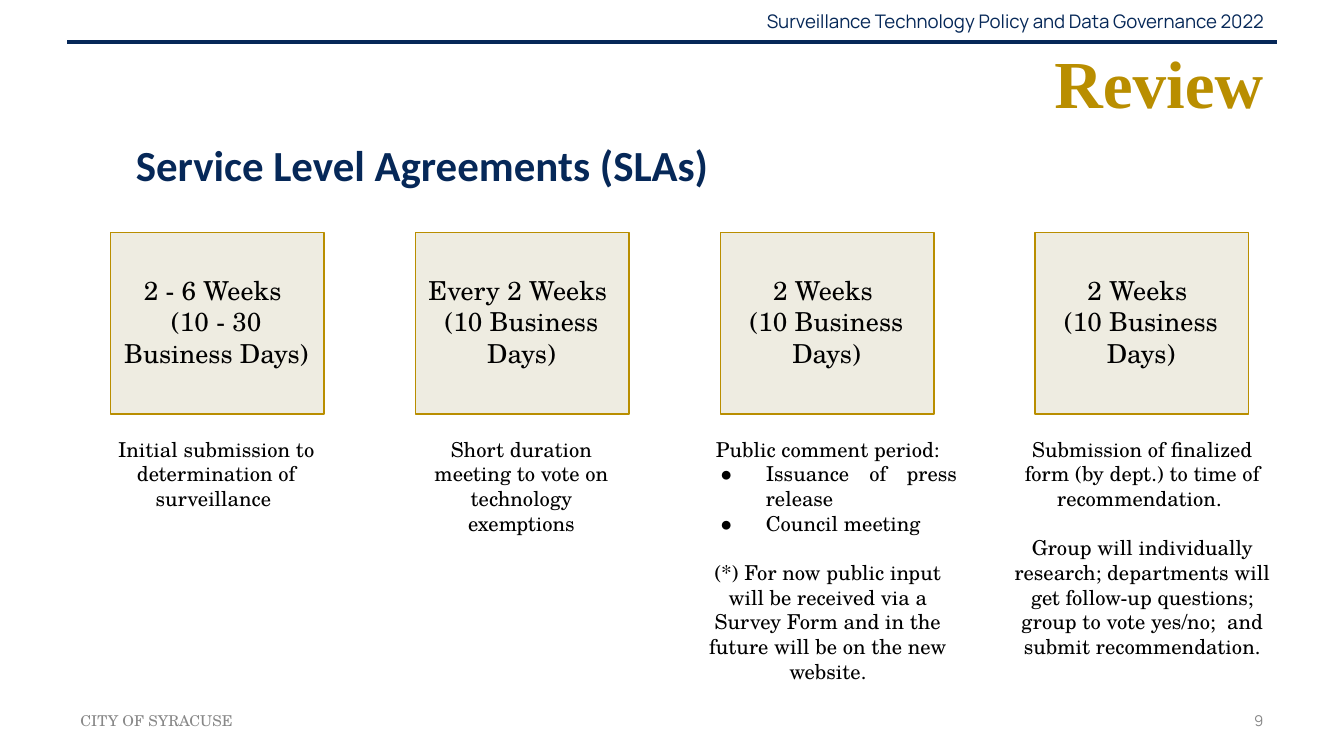
from dataclasses import dataclass

from lxml import etree
from pptx import Presentation
from pptx.dml.color import RGBColor
from pptx.enum.shapes import MSO_CONNECTOR, MSO_SHAPE
from pptx.enum.text import MSO_ANCHOR, MSO_AUTO_SIZE, PP_ALIGN
from pptx.oxml.ns import qn
from pptx.util import Emu, Pt

LEFT, CENTER = PP_ALIGN.LEFT, PP_ALIGN.CENTER
RIGHT, JUSTIFY = PP_ALIGN.RIGHT, PP_ALIGN.JUSTIFY
TOP, MIDDLE = MSO_ANCHOR.TOP, MSO_ANCHOR.MIDDLE
GROW = MSO_AUTO_SIZE.SHAPE_TO_FIT_TEXT
FIXED = MSO_AUTO_SIZE.NONE
RECTANGLE, STRAIGHT = MSO_SHAPE.RECTANGLE, MSO_CONNECTOR.STRAIGHT

EMU_PER_PX = 9144  # 100 px to the inch
SLIDE_WIDTH = 1000
TITLE_ONLY = 5


@dataclass(frozen=True)
class Style:
    font: str
    size: int
    color: str
    bold: bool = False


class Theme:
    navy, gold, cream = "062858", "B98E00", "EEECE1"
    header = Style("Manrope", 10, navy)
    title = Style("Times New Roman", 36, gold, True)
    heading = Style("Calibri", 23, navy, True)
    duration = Style("TeX Gyre Schola", 14, "000000")
    detail = Style("TeX Gyre Schola", 11, "000000")
    footer = Style("TeX Gyre Schola", 8, "888888")
    page_number = Style("Manrope", 8, "888888")
    rule_width, box_line_width = 2.25, 0.75
    paragraph_gap = 13.2


@dataclass(frozen=True)
class Line:
    """One paragraph, optionally a bullet or set off by a gap above."""
    text: str
    bullet: bool = False
    gap: bool = False


@dataclass(frozen=True)
class Stage:
    left: int
    duration: tuple
    details: tuple
    wide: bool = False


TEN_DAYS = Line("(10 Business Days)")
STAGES = (
    Stage(82,
          (Line("2 - 6 Weeks "), Line("(10 - 30"), Line("Business Days)")),
          (Line("Initial submission to determination of surveillance "),)),
    Stage(309,
          (Line("Every 2 Weeks "), TEN_DAYS),
          (Line("Short duration meeting to vote on technology exemptions"),)),
    Stage(536,
          (Line("2 Weeks "), TEN_DAYS),
          (Line("Public comment period:"),
           Line("Issuance of press release ", bullet=True),
           Line("Council meeting", bullet=True),
           Line("(*) For now public input will be received via a Survey Form "
                "and in the future will be on the new website.", gap=True)),
          wide=True),
    Stage(770,
          (Line("2 Weeks "), TEN_DAYS),
          (Line("Submission of finalized form (by dept.) to time of "
                "recommendation. "),
           Line("Group will individually research; departments will get "
                "follow-up questions; group to vote yes/no;  and submit "
                "recommendation.", gap=True)),
          wide=True),
)


def px(length):
    return Emu(length * EMU_PER_PX)


def color(value):
    return RGBColor.from_string(value)


def add_bullet(paragraph, style):
    properties = paragraph._p.get_or_add_pPr()
    properties.set("marL", str(px(50)))
    properties.set("indent", str(px(-35)))
    fill = etree.SubElement(properties, qn("a:buClr"))
    etree.SubElement(fill, qn("a:srgbClr"), val=style.color)
    etree.SubElement(properties, qn("a:buSzPts"), val=str(style.size * 100))
    etree.SubElement(properties, qn("a:buFont"), typeface=style.font)
    etree.SubElement(properties, qn("a:buChar"), char="●")


def write_lines(frame, lines, style, align):
    for index, line in enumerate(lines):
        paragraph = frame.add_paragraph() if index else frame.paragraphs[0]
        paragraph.alignment = JUSTIFY if line.bullet else align
        if line.gap:
            paragraph.space_before = Pt(Theme.paragraph_gap)
        if line.bullet:
            add_bullet(paragraph, style)
        run = paragraph.add_run()
        run.text = line.text
        run.font.name = style.font
        run.font.size = Pt(style.size)
        run.font.bold = style.bold
        run.font.color.rgb = color(style.color)


def format_frame(frame, inset, anchor, auto_size):
    frame.word_wrap = True
    frame.auto_size = auto_size
    frame.vertical_anchor = anchor
    frame.margin_left = frame.margin_right = px(10)
    frame.margin_top = frame.margin_bottom = px(inset)


def add_text(slide, box, lines, style, align, inset=10, anchor=TOP,
             auto_size=FIXED):
    shape = slide.shapes.add_textbox(*map(px, box))
    format_frame(shape.text_frame, inset, anchor, auto_size)
    write_lines(shape.text_frame, lines, style, align)


def add_label(slide, box, text, style, align):
    """Add a one-line header or footer text."""
    add_text(slide, box, [Line(text)], style, align, inset=5, anchor=MIDDLE)


def set_title(slide, box, text):
    title = slide.shapes.title
    title.left, title.top, title.width, title.height = map(px, box)
    format_frame(title.text_frame, 5, MIDDLE, FIXED)
    write_lines(title.text_frame, [Line(text)], Theme.title, RIGHT)


def add_rule(slide, left, right, top):
    rule = slide.shapes.add_connector(
        STRAIGHT, px(left), px(top), px(right), px(top))
    rule.line.color.rgb = color(Theme.navy)
    rule.line.width = Pt(Theme.rule_width)
    etree.SubElement(rule._element.spPr, qn("a:effectLst"))


def add_stage(slide, stage):
    """Add a duration box with the details below it."""
    box = slide.shapes.add_shape(
        RECTANGLE, px(stage.left), px(173), px(159), px(135))
    box.shadow.inherit = False
    box.fill.solid()
    box.fill.fore_color.rgb = color(Theme.cream)
    box.line.color.rgb = color(Theme.gold)
    box.line.width = Pt(Theme.box_line_width)

    duration_height = 91 if len(stage.duration) > 2 else 67
    add_text(slide, (stage.left - 7, 194, 172, duration_height),
             stage.duration, Theme.duration, CENTER, auto_size=GROW)

    outset, width, height = (26, 212, 187) if stage.wide else (7, 172, 76)
    add_text(slide, (stage.left - outset, 315, width, height),
             stage.details, Theme.detail, CENTER, auto_size=GROW)


def main():
    presentation = Presentation()
    presentation.slide_width = px(SLIDE_WIDTH)
    presentation.slide_height = Emu(px(SLIDE_WIDTH) * 9 // 16)
    slide = presentation.slides.add_slide(
        presentation.slide_layouts[TITLE_ONLY])

    add_label(slide, (521, 1, 429, 30),
              "Surveillance Technology Policy and Data Governance 2022",
              Theme.header, RIGHT)
    add_rule(slide, 50, 950, 31)
    set_title(slide, (96, 29, 854, 64), "Review")
    add_text(slide, (73, 93, 483, 67),
             [Line("Service Level Agreements (SLAs)")], Theme.heading, CENTER)
    for stage in STAGES:
        add_stage(slide, stage)
    add_label(slide, (50, 521, 233, 30), "CITY OF SYRACUSE",
              Theme.footer, LEFT)
    add_label(slide, (717, 521, 233, 30), "9", Theme.page_number, RIGHT)

    presentation.save("out.pptx")


if __name__ == "__main__":
    main()
